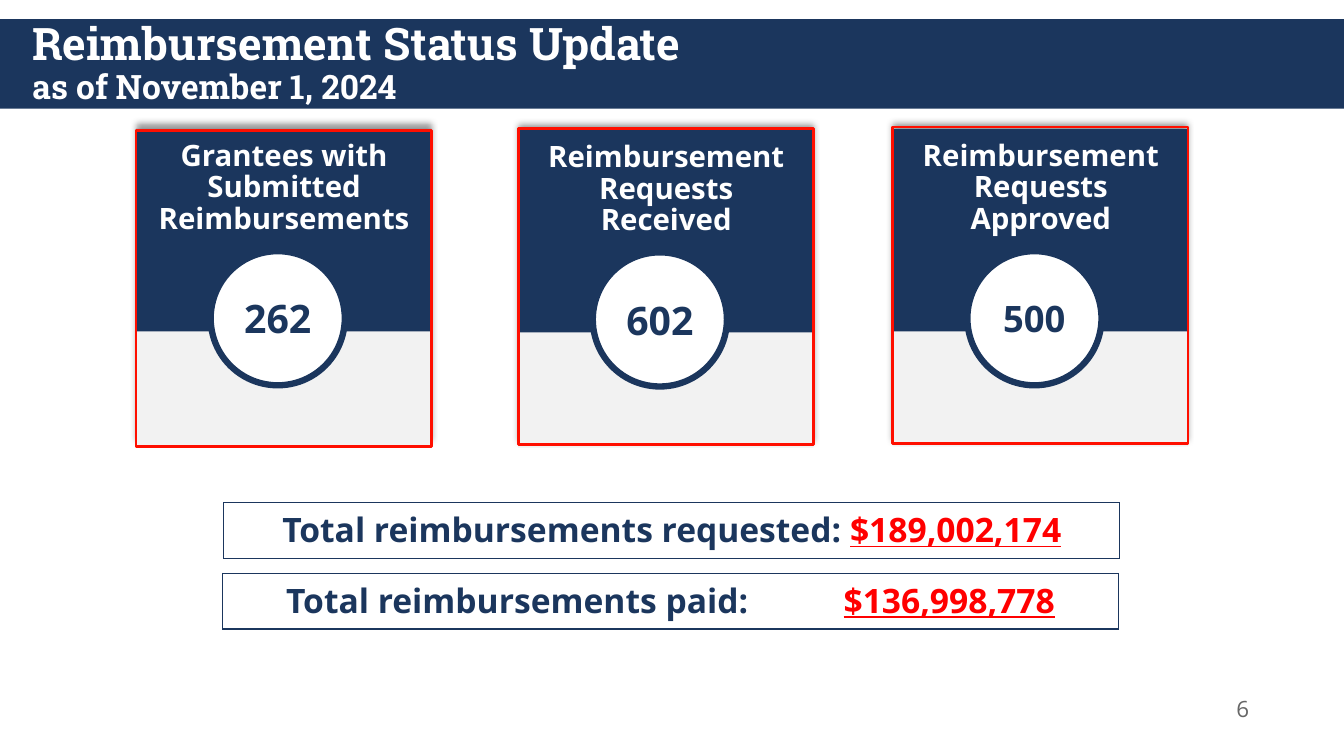
from dataclasses import dataclass

from lxml import etree
from pptx import Presentation
from pptx.dml.color import RGBColor
from pptx.enum.shapes import MSO_SHAPE
from pptx.enum.text import MSO_ANCHOR, MSO_AUTO_SIZE, PP_ALIGN
from pptx.oxml.ns import qn
from pptx.util import Cm, Pt

RECTANGLE, OVAL = MSO_SHAPE.RECTANGLE, MSO_SHAPE.OVAL
TOP, MIDDLE = MSO_ANCHOR.TOP, MSO_ANCHOR.MIDDLE
LEFT, CENTER = PP_ALIGN.LEFT, PP_ALIGN.CENTER
COLORS = {"navy": "1B365D", "pale": "F2F2F2", "white": "FFFFFF", "frame": "FF0F00",
          "amount": "FF0000", "number": "666666", "shadow": "000000"}
BODY_FONT, TITLE_FONT = "Open Sans", "Roboto Slab"
CARD_WIDTH, CARD_HEIGHT, HEADER_HEIGHT, FRAME_HEIGHT = 7.44, 8.0, 5.1, 7.98
CIRCLE_SIZE = 3.38
TOTAL_WIDTH, TOTAL_HEIGHT = 22.58, 1.37


@dataclass
class Card:
    caption: str
    count: str
    left: float
    top: float
    frame_top: float
    count_size: float = 28


@dataclass
class Total:
    label: str
    amount: str
    left: float
    top: float
    align: PP_ALIGN = CENTER
    margin_left: float = 0.33
    tab: float = 0


CARDS = [
    Card("Grantees with Submitted Reimbursements", "262", 3.43, 3.25, 3.28),
    Card("Reimbursement Requests Received", "602", 13.06, 3.28, 3.23),
    Card("Reimbursement Requests Approved", "500", 22.5, 3.25, 3.2, 26),
]
TOTALS = [
    Total("Total reimbursements requested: ", "$189,002,174", 5.64, 12.67),
    Total("Total reimbursements paid:\t", "$136,998,778", 5.61, 14.45, LEFT, 1.6, 14.05),
]


def rgb(color: str) -> RGBColor:
    return RGBColor.from_string(COLORS[color])


def set_format(target, values: dict) -> None:
    for attribute, value in values.items():
        setattr(target, attribute, value)


def add_run(paragraph, text: str, size: float, color: str, font: str = BODY_FONT,
            bold: bool = True, underline: bool | None = None) -> None:
    run = paragraph.add_run()
    run.text = text
    set_format(run.font, {"name": font, "size": Pt(size), "bold": bold, "underline": underline})
    run.font.color.rgb = rgb(color)


def set_frame(frame, side: float, end: float, anchor: MSO_ANCHOR) -> None:
    set_format(frame, {"margin_left": Cm(side), "margin_right": Cm(side),
                       "margin_top": Cm(end), "margin_bottom": Cm(end),
                       "vertical_anchor": anchor, "word_wrap": True,
                       "auto_size": MSO_AUTO_SIZE.NONE})


def add_block(shapes, preset: MSO_SHAPE, left: float, top: float, width: float, height: float,
              fill: str | None = None, line: str | None = None, line_width: float = 1):
    block = shapes.add_shape(preset, Cm(left), Cm(top), Cm(width), Cm(height))
    block.shadow.inherit = False
    if fill:
        block.fill.solid()
        block.fill.fore_color.rgb = rgb(fill)
    else:
        block.fill.background()
    if line:
        block.line.color.rgb = rgb(line)
        block.line.width = Pt(line_width)
    else:
        block.line.fill.background()
    return block


def add_label(shapes, text: str, left: float, top: float, width: float, height: float,
              size: float, color: str, bold: bool, anchor: MSO_ANCHOR) -> None:
    label = shapes.add_textbox(Cm(left), Cm(top), Cm(width), Cm(height))
    set_frame(label.text_frame, 0, 0, anchor)
    paragraph = label.text_frame.paragraphs[0]
    set_format(paragraph, {"alignment": CENTER, "line_spacing": 0.9})
    add_run(paragraph, text, size, color, bold=bold)


def add_shadow(block) -> None:
    effects = block._element.spPr.find(qn("a:effectLst"))
    shadow = etree.SubElement(effects, qn("a:outerShdw"), blurRad=str(Pt(5)), dist=str(Pt(4)),
                              dir="16200000", rotWithShape="0")
    color = etree.SubElement(shadow, qn("a:srgbClr"), val=COLORS["shadow"])
    etree.SubElement(color, qn("a:alpha"), val="40000")


def add_card(slide, card: Card) -> None:
    shapes = slide.shapes.add_group_shape().shapes
    base = add_block(shapes, RECTANGLE, card.left, card.top, CARD_WIDTH, CARD_HEIGHT, "pale")
    add_shadow(base)
    add_block(shapes, RECTANGLE, card.left, card.top, CARD_WIDTH, HEADER_HEIGHT, "navy")
    circle = add_block(shapes, OVAL, card.left + 1.88, card.top + 3.08,
                       CIRCLE_SIZE, CIRCLE_SIZE, "white", "navy", 4.5)
    set_frame(circle.text_frame, 0.33, 0.18, MIDDLE)
    count = circle.text_frame.paragraphs[0]
    count.alignment = CENTER
    add_run(count, card.count, card.count_size, "navy")
    add_label(shapes, card.caption, card.left + 0.33, card.top + 0.3, 6.8, 2.7,
              21, "white", True, TOP)
    add_block(slide.shapes, RECTANGLE, card.left, card.frame_top, CARD_WIDTH, FRAME_HEIGHT,
              line="frame", line_width=2)


def add_total(slide, total: Total) -> None:
    table = slide.shapes.add_table(1, 1, Cm(total.left), Cm(total.top),
                                   Cm(TOTAL_WIDTH), Cm(TOTAL_HEIGHT)).table
    set_format(table, {"first_row": False, "horz_banding": False})
    cell = table.cell(0, 0)
    set_format(cell, {"margin_left": Cm(total.margin_left), "margin_right": Cm(0.33),
                      "margin_top": Cm(0.18), "margin_bottom": Cm(0.18)})
    # Borders come before the fill in the cell properties
    properties = cell._tc.get_or_add_tcPr()
    for side in ("lnL", "lnR", "lnT", "lnB"):
        border = etree.SubElement(properties, qn(f"a:{side}"), w=str(Pt(1)))
        solid = etree.SubElement(border, qn("a:solidFill"))
        etree.SubElement(solid, qn("a:srgbClr"), val=COLORS["navy"])
    cell.fill.background()
    paragraph = cell.text_frame.paragraphs[0]
    if total.tab:
        tabs = etree.SubElement(paragraph._p.get_or_add_pPr(), qn("a:tabLst"))
        etree.SubElement(tabs, qn("a:tab"), pos=str(Cm(total.tab)), algn="l")
    set_format(paragraph, {"alignment": total.align, "line_spacing": 0.9})
    add_run(paragraph, total.label, 24, "navy")
    add_run(paragraph, total.amount, 24, "amount", underline=True)


def add_title(slide) -> None:
    title = slide.shapes.title
    set_format(title, {"left": Cm(0.56), "top": Cm(0.48), "width": Cm(32.74), "height": Cm(2.29)})
    set_frame(title.text_frame, 0.25, 0.13, MIDDLE)
    heading = title.text_frame.paragraphs[0]
    set_format(heading, {"alignment": LEFT, "line_spacing": 0.9})
    add_run(heading, "Reimbursement Status Update", 32, "white", TITLE_FONT)
    heading.add_line_break()
    add_run(heading, "as of November 1, 2024", 24, "white", TITLE_FONT)
    # Banner goes behind the title
    banner = add_block(slide.shapes, RECTANGLE, 0, 0.48, 33.87, 2.26, "navy")
    title._element.addprevious(banner._element)


def main() -> None:
    presentation = Presentation()
    set_format(presentation, {"slide_width": Cm(33.87), "slide_height": Cm(19.05)})
    slide = presentation.slides.add_slide(presentation.slide_layouts[5])
    add_title(slide)
    for card in CARDS:
        add_card(slide, card)
    for total in TOTALS:
        add_total(slide, total)
    # Page number
    add_label(slide.shapes, "6", 30.47, 17.36, 1.7, 1.07, 16, "number", False, MIDDLE)
    presentation.save("out.pptx")


if __name__ == "__main__":
    main()
